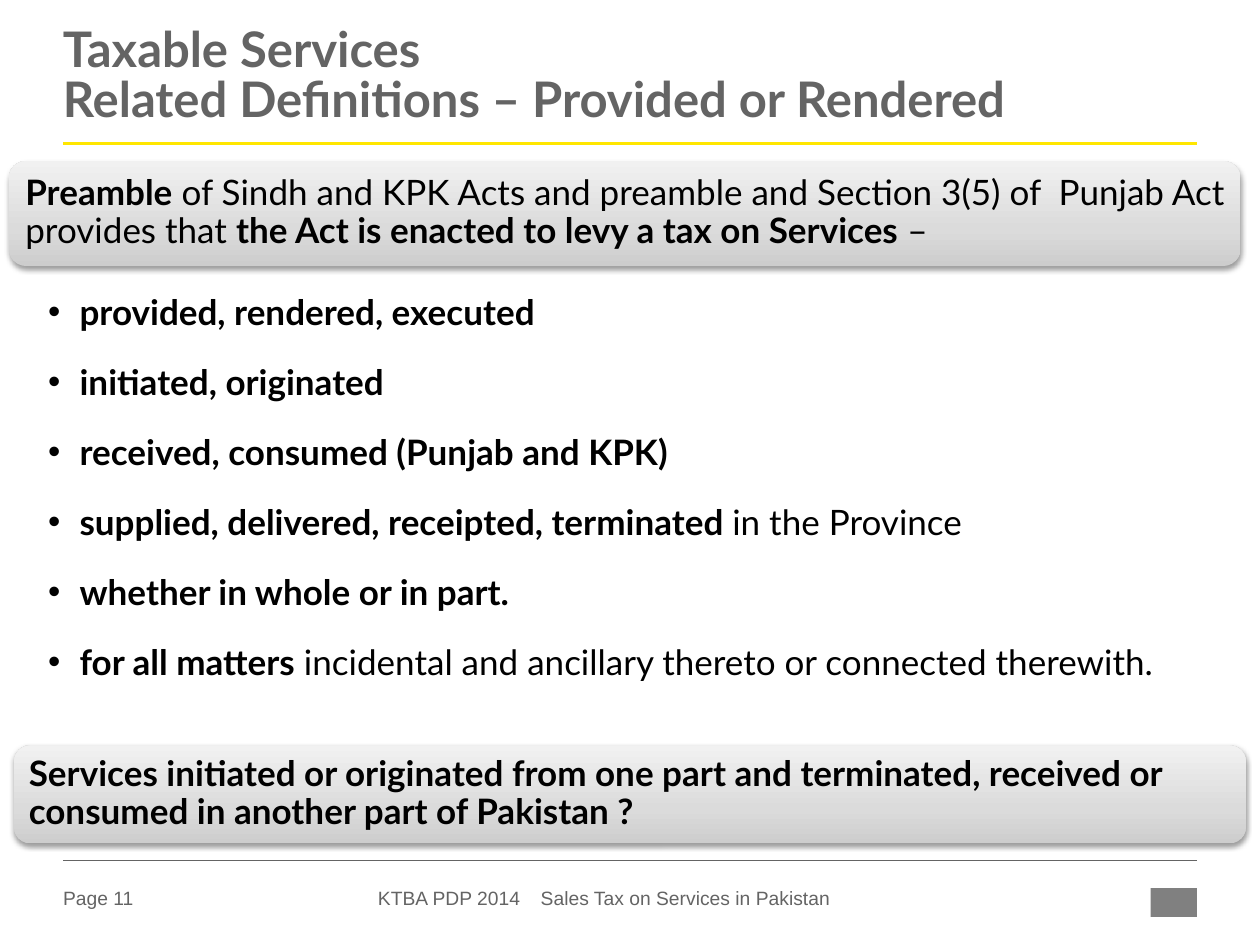
import pptx
import pptx.util
import pptx.dml.color
import pptx.enum.shapes
import pptx.enum.text
import pptx.oxml
import pptx.oxml.ns
from lxml import etree

Pt = pptx.util.Pt
RGBColor = pptx.dml.color.RGBColor
Anchor = pptx.enum.text.MSO_ANCHOR
Shape = pptx.enum.shapes.MSO_SHAPE
qn = pptx.oxml.ns.qn

BLACK = RGBColor(0x00, 0x00, 0x00)
GREY = RGBColor(0x64, 0x64, 0x64)
MARK_GREY = RGBColor(0x80, 0x80, 0x80)
YELLOW = RGBColor(0xFF, 0xE6, 0x00)
PANEL_STOPS = (
    (0, RGBColor(0xCD, 0xCD, 0xCD)),
    (35, RGBColor(0xDB, 0xDB, 0xDB)),
    (100, RGBColor(0xF1, 0xF1, 0xF1)),
)

# Each run is (text, bold)
PREAMBLE = [
    ("Preamble", True),
    (" of Sindh and KPK Acts and preamble and Section 3(5) of  Punjab Act provides that ", False),
    ("the Act is enacted to levy a tax on Services", True),
    (" –", False),
]
DEFINITIONS = [
    [("provided, rendered, executed", True)],
    [("initiated, originated", True)],
    [("received, consumed (Punjab and KPK)", True)],
    [("supplied, delivered, receipted, terminated ", True), ("in the Province", False)],
    [("whether in whole or in part.", True)],
    [("for all matters", True),
     (" incidental and ancillary thereto or connected therewith.", False)],
]
QUESTION = [
    ("Services initiated or originated from one part and terminated, received or "
     "consumed in another part of Pakistan ?", True),
]


def add_text_frame(slide, box, insets=(0, 0, 0, 0), anchor=Anchor.MIDDLE):
    frame = slide.shapes.add_textbox(*map(Pt, box)).text_frame
    frame.word_wrap = True
    frame.vertical_anchor = anchor
    frame.margin_left, frame.margin_top, frame.margin_right, frame.margin_bottom = map(Pt, insets)
    return frame


def add_run(paragraph, text, size, bold=False, color=BLACK, font="Lato"):
    run = paragraph.add_run()
    run.text = text
    run.font.name = font
    run.font.size = Pt(size)
    run.font.bold = bold
    run.font.color.rgb = color


def add_rule(slide, y, color, width):
    rule = slide.shapes.add_connector(
        pptx.enum.shapes.MSO_CONNECTOR.STRAIGHT, Pt(36), Pt(y), Pt(684), Pt(y))
    rule.line.color.rgb = color
    rule.line.width = Pt(width)
    etree.SubElement(rule.element.spPr, qn("a:effectLst"))


def add_panel(slide, box, text_box, runs):
    panel = slide.shapes.add_shape(Shape.ROUNDED_RECTANGLE, *map(Pt, box))
    panel.line.fill.background()

    # Grey gradient, darkest at the bottom
    panel.fill.gradient()
    panel.fill.gradient_angle = 90
    properties = panel.element.spPr
    stops = properties.find(".//" + qn("a:gsLst"))
    for stop in list(stops):
        stops.remove(stop)
    for position, color in PANEL_STOPS:
        stop = etree.SubElement(stops, qn("a:gs"), pos=str(position * 1000))
        etree.SubElement(stop, qn("a:srgbClr"), val=str(color))

    # Soft shadow below
    panel.shadow.inherit = False
    shadow = etree.SubElement(
        properties.find(qn("a:effectLst")), qn("a:outerShdw"),
        blurRad=str(Pt(3.1)), dist=str(Pt(1.6)), dir="5400000", rotWithShape="0")
    shade = etree.SubElement(shadow, qn("a:srgbClr"), val=str(BLACK))
    etree.SubElement(shade, qn("a:alpha"), val="38000")

    paragraph = add_text_frame(slide, text_box, (6, 6, 6, 6)).paragraphs[0]
    paragraph.line_spacing = 0.9
    for text, bold in runs:
        add_run(paragraph, text, 20, bold)


def add_bullets(slide, box, items):
    frame = add_text_frame(slide, box, (22.5, 2, 11.5, 2), Anchor.TOP)
    for index, runs in enumerate(items):
        paragraph = frame.add_paragraph() if index else frame.paragraphs[0]
        paragraph.line_spacing = 1.5
        paragraph.space_after = Pt(4)
        properties = paragraph._p.get_or_add_pPr()
        properties.set("marL", str(Pt(18)))
        properties.set("indent", str(Pt(-18)))
        etree.SubElement(properties, qn("a:buFont"), typeface="Arial")
        etree.SubElement(properties, qn("a:buChar"), char="•")
        for text, bold in runs:
            add_run(paragraph, text, 20, bold)


def add_title(slide, lines):
    paragraph = add_text_frame(slide, (36, 16, 648, 67.5), anchor=Anchor.TOP).paragraphs[0]
    paragraph.line_spacing = 0.85
    for index, line in enumerate(lines):
        if index:
            paragraph.add_line_break()
        add_run(paragraph, line, 28, True, GREY)


def add_footer(slide, box, text, tab=None):
    paragraph = add_text_frame(slide, box).paragraphs[0]
    if tab:
        tabs = etree.SubElement(paragraph._p.get_or_add_pPr(), qn("a:tabLst"))
        etree.SubElement(tabs, qn("a:tab"), pos=str(Pt(tab)), algn="l")
    add_run(paragraph, text, 11, color=GREY, font="Arial")


def add_corner_mark(slide):
    mark = slide.shapes.add_shape(Shape.RECTANGLE, Pt(657.5), Pt(507.5), Pt(26.5), Pt(16.5))
    mark.shadow.inherit = False
    mark.fill.solid()
    mark.fill.fore_color.rgb = MARK_GREY
    mark.line.fill.background()


def main():
    deck = pptx.Presentation()
    deck.slide_width, deck.slide_height = Pt(720), Pt(540)
    slide = deck.slides.add_slide(deck.slide_layouts[6])

    # Footer and rules
    add_footer(slide, (36, 505, 57, 16), "Page 11")
    add_corner_mark(slide)
    add_rule(slide, 82, YELLOW, 1.5)
    add_rule(slide, 491.5, GREY, 0.25)
    add_footer(slide, (216, 505, 271, 16),
               "KTBA PDP 2014\tSales Tax on Services in Pakistan", tab=93)

    # Title
    add_title(slide, ["Taxable Services", "Related Definitions – Provided or Rendered"])

    # Preamble, definitions and closing question
    add_panel(slide, (5, 92, 704, 60), (8.5, 95, 698.5, 54), PREAMBLE)
    add_bullets(slide, (5, 152, 704, 267), DEFINITIONS)
    add_panel(slide, (8, 426, 704, 56), (10.5, 428.5, 698.5, 50.5), QUESTION)

    deck.save("out.pptx")


if __name__ == "__main__":
    main()
